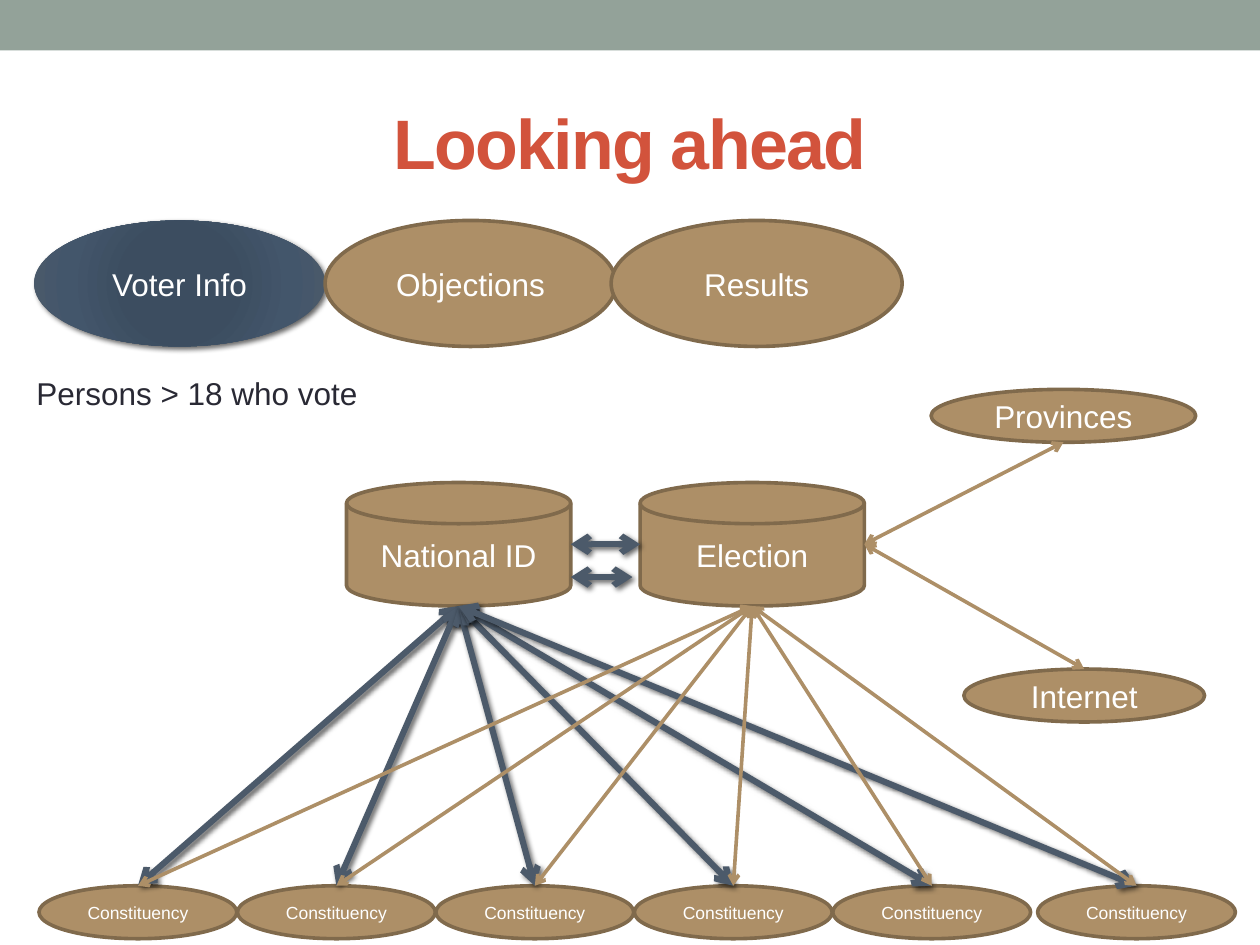
from dataclasses import dataclass

from lxml import etree
from pptx import Presentation
from pptx.dml.color import RGBColor
from pptx.enum import shapes, text
from pptx.oxml import parse_xml
from pptx.oxml.ns import nsdecls, qn
from pptx.util import Inches, Pt


@dataclass(frozen=True)
class Theme:
    font: str = "Arial"
    banner: str = "93A299"
    title: str = "D2533C"
    ink: str = "292934"
    white: str = "FFFFFF"
    tan: str = "AD8F67"
    tan_edge: str = "806A4C"
    slate: str = "4C5A6A"
    slate_stops: tuple = ((0, "3B4D61"), (34, "3C4D60"), (70, "43566B"), (100, "4C5A6A"))
    title_size: int = 40
    body_size: int = 18
    small_size: int = 10
    thin: float = 2.08
    thick: float = 3.5


T = Theme()
OVAL = shapes.MSO_SHAPE.OVAL
DISK = shapes.MSO_SHAPE.FLOWCHART_MAGNETIC_DISK


def rgb(value):
    return RGBColor.from_string(value)


def style(p, size, color, align=None):
    p.font.name, p.font.size = T.font, Pt(size)
    p.font.color.rgb = rgb(color)
    p.alignment = align


def add_effects(sp, shadow):
    """Give a shape or connector a soft shadow, or an empty effect list."""
    drop = (f'<a:outerShdw blurRad="{Pt(3)}" dist="{Pt(2)}" dir="2700000" rotWithShape="0">'
            '<a:srgbClr val="000000"><a:alpha val="60000"/></a:srgbClr></a:outerShdw>')
    sp._element.spPr.append(parse_xml(
        f'<a:effectLst {nsdecls("a")}>{drop if shadow else ""}</a:effectLst>'))


def fill_radial(sp, stops):
    gs = "".join(f'<a:gs pos="{pos * 1000}"><a:srgbClr val="{color}"/></a:gs>'
                 for pos, color in stops)
    sp._element.spPr.insert(2, parse_xml(
        f'<a:gradFill {nsdecls("a")} rotWithShape="1"><a:gsLst>{gs}</a:gsLst>'
        '<a:path path="circle"><a:fillToRect l="100000" t="100000" r="100000" b="100000"/>'
        '</a:path></a:gradFill>'))


def add_node(s, kind, label, box, size=T.body_size, active=False):
    sp = s.shapes.add_shape(kind, *map(Inches, box))
    if active:
        fill_radial(sp, T.slate_stops)
        sp.line.fill.background()
    else:
        sp.fill.solid()
        sp.fill.fore_color.rgb = rgb(T.tan)
        sp.line.color.rgb = rgb(T.tan_edge)
        sp.line.width = Pt(T.thin)
    add_effects(sp, active)
    tf = sp.text_frame
    tf.vertical_anchor = text.MSO_ANCHOR.MIDDLE
    tf.text = label
    style(tf.paragraphs[0], size, T.white, text.PP_ALIGN.CENTER)


def add_link(s, start, end, heavy=False):
    """Double-headed arrow; heavy links are slate with a shadow."""
    c = s.shapes.add_connector(shapes.MSO_CONNECTOR.STRAIGHT, *map(Inches, (*start, *end)))
    c.line.color.rgb = rgb(T.slate if heavy else T.tan)
    c.line.width = Pt(T.thick if heavy else T.thin)
    for tag in ("a:headEnd", "a:tailEnd"):
        etree.SubElement(c.line._get_or_add_ln(), qn(tag)).set("type", "arrow")
    add_effects(c, heavy)


def top(box):
    return box[0] + box[2] / 2, box[1]


def bottom(box):
    return box[0] + box[2] / 2, box[1] + box[3]


def add_header(s, banner, title):
    sp = s.shapes.add_shape(shapes.MSO_SHAPE.RECTANGLE, *map(Inches, banner))
    sp.fill.solid()
    sp.fill.fore_color.rgb = rgb(T.banner)
    sp.line.fill.background()
    sp.shadow.inherit = False
    ph = s.shapes.title
    ph.left, ph.top, ph.width, ph.height = map(Inches, title)
    tf = ph.text_frame
    tf.text = "Looking ahead"
    tf.vertical_anchor = text.MSO_ANCHOR.MIDDLE
    p = tf.paragraphs[0]
    style(p, T.title_size, T.title, text.PP_ALIGN.CENTER)
    p.font.bold = True
    p.runs[0].font._element.set("spc", "-100")


def add_topics(s, box):
    x, y, w, h = box
    for label, dx in (("Voter Info", 0), ("Objections", 2.31), ("Results", 4.58)):
        add_node(s, OVAL, label, (x + dx, y, w, h), active=label == "Voter Info")


def add_caption(s, box):
    tf = s.shapes.add_textbox(*map(Inches, box)).text_frame
    tf.word_wrap = False
    tf.text = "Persons > 18 who vote"
    style(tf.paragraphs[0], T.body_size, T.ink)


def add_network(s, national, election, first_seat):
    # Constituencies, the last one set slightly apart
    x, y, w, h = first_seat
    seats = [(x + 1.575 * i + (0.05 if i == 5 else 0), y, w, h) for i in range(6)]
    for seat in seats:
        add_node(s, OVAL, "Constituency", seat, T.small_size)

    # Databases, each linked to every constituency
    for label, box, heavy in (("National ID", national, True), ("Election", election, False)):
        add_node(s, DISK, label, box)
        for seat in seats:
            add_link(s, top(seat), bottom(box), heavy)

    # Exchange between the databases
    left, mid = national[0] + national[2], national[1] + national[3] / 2
    add_link(s, (left, mid), (election[0], mid), True)
    add_link(s, (election[0] - 0.06, mid + 0.26), (left, mid + 0.26), True)


def add_outlets(s, source, provinces, internet):
    for label, box, end in (("Provinces", provinces, bottom(provinces)),
                            ("Internet", internet, top(internet))):
        add_node(s, OVAL, label, box)
        add_link(s, source, end)


def main():
    prs = Presentation()
    prs.slide_width, prs.slide_height = Inches(10), Inches(7.5)
    s = prs.slides.add_slide(prs.slide_layouts[5])
    add_header(s, (0, 0, 10, 0.4), (0.5, 0.58, 9, 1.08))
    add_topics(s, (0.27, 1.75, 2.31, 1))
    add_network(s, (2.75, 3.83, 1.78, 0.98), (5.08, 3.83, 1.78, 0.98), (0.31, 7.03, 1.57, 0.42))
    add_outlets(s, (6.86, 4.32), (7.39, 3.09, 2.1, 0.42), (7.65, 5.31, 1.91, 0.42))
    add_caption(s, (0.19, 2.92, 2.91, 0.4))
    prs.save("out.pptx")


if __name__ == "__main__":
    main()
